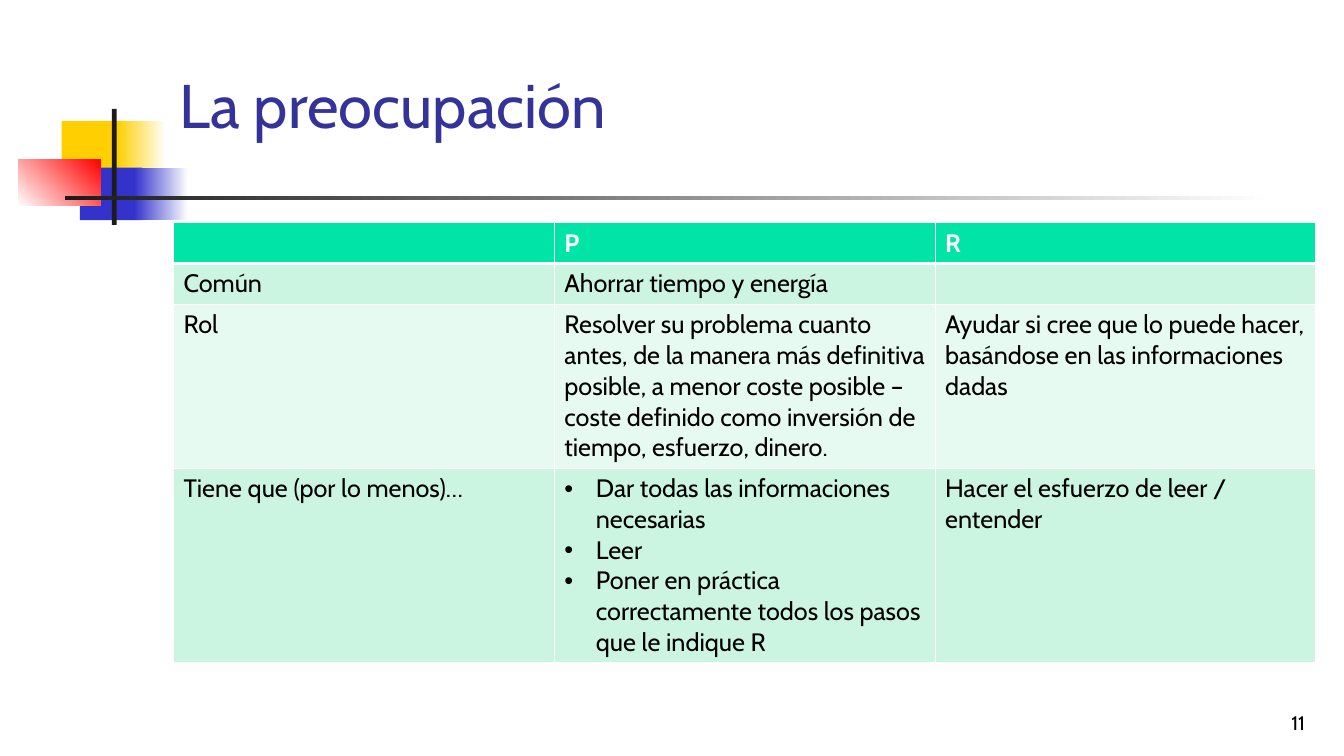
from dataclasses import dataclass

from lxml import etree
from pptx import Presentation
from pptx.dml.color import RGBColor
from pptx.enum import shapes, text
from pptx.oxml.ns import qn
from pptx.util import Pt


@dataclass(frozen=True)
class Theme:
    font: str = "Cabin"
    title_size: int = 44
    body_size: int = 18
    number_size: int = 14
    title: str = "333399"
    black: str = "000000"
    white: str = "FFFFFF"
    yellow: str = "FFCF01"
    blue: str = "3333CC"
    red: str = "FF0000"
    bar: str = "1C1C1C"
    header: str = "00E4A8"
    bands: tuple = ("CCF5E1", "E7FAF1")


THEME = Theme()

HEADINGS = ("", "P", "R")
CONCERNS = (
    ("Común", "Ahorrar tiempo y energía", ""),
    ("Rol",
     "Resolver su problema cuanto antes, de la manera más definitiva posible, "
     "a menor coste posible – coste definido como inversión de tiempo, esfuerzo, dinero.",
     "Ayudar si cree que lo puede hacer, basándose en las informaciones dadas"),
    ("Tiene que (por lo menos)…",
     ["Dar todas las informaciones necesarias",
      "Leer",
      "Poner en práctica correctamente todos los pasos que le indique R"],
     "Hacer el esfuerzo de leer / entender"),
)
ROW_HEIGHTS = (29.2, 29.2, 117.1, 138.6)
COLUMN_WIDTH = 272


def rgb(value):
    return RGBColor.from_string(value)


def add_run(paragraph, words, size, color, bold=False):
    run = paragraph.add_run()
    run.text = words
    run.font.name = THEME.font
    run.font.size = Pt(size)
    run.font.bold = bold
    run.font.color.rgb = rgb(color)


def add_block(slide, box, start, end=None, angle=0):
    """Plain rectangle, or one that fades from start to end."""
    block = slide.shapes.add_shape(shapes.MSO_SHAPE.RECTANGLE, *map(Pt, box))
    block.shadow.inherit = False
    block.line.fill.background()
    if end is None:
        block.fill.solid()
        block.fill.fore_color.rgb = rgb(start)
        return
    block.fill.gradient()
    block.fill.gradient_angle = angle
    for stop, color, position in zip(block.fill.gradient_stops, (start, end), (0, 1)):
        stop.color.rgb = rgb(color)
        stop.position = position


def add_ornament(slide):
    add_block(slide, (44, 86.4, 46, 37.4), THEME.yellow)
    add_block(slide, (84, 86.4, 34.5, 37.4), THEME.yellow, THEME.white)
    add_block(slide, (57, 119.8, 44.6, 37.4), THEME.blue)
    add_block(slide, (95.8, 119.8, 38.6, 37.4), THEME.blue, THEME.white)
    add_block(slide, (13, 113.6, 59, 33.4), THEME.white, THEME.red, angle=45)
    add_block(slide, (80, 77.8, 3.3, 82.8), THEME.bar)
    add_block(slide, (46.6, 140.2, 864, 2.5), THEME.bar, THEME.white)


def set_title(slide, words):
    title = slide.shapes.title
    title.left, title.top, title.width, title.height = map(Pt, (121, 16.6, 818, 115.2))
    frame = title.text_frame
    frame.auto_size = text.MSO_AUTO_SIZE.NONE
    frame.vertical_anchor = text.MSO_ANCHOR.MIDDLE
    frame.paragraphs[0].alignment = text.PP_ALIGN.LEFT
    add_run(frame.paragraphs[0], words, THEME.title_size, THEME.title)


def add_bullet(paragraph, indent=22.5):
    properties = paragraph._p.get_or_add_pPr()
    properties.set("marL", str(Pt(indent)))
    properties.set("indent", str(-Pt(indent)))
    etree.SubElement(properties, qn("a:buFont"), typeface="Arial")
    etree.SubElement(properties, qn("a:buChar"), char="•")


def set_borders(cell, bottom=1, top=1):
    properties = cell._tc.get_or_add_tcPr()
    sides = (("L", 1), ("R", 1), ("T", top), ("B", bottom))
    for place, (side, width) in enumerate(sides):
        line = etree.Element(qn(f"a:ln{side}"), w=str(Pt(width)))
        fill = etree.SubElement(line, qn("a:solidFill"))
        etree.SubElement(fill, qn("a:srgbClr"), val=THEME.white)
        properties.insert(place, line)


def fill_cell(cell, content, fill, color, bold=False):
    cell.fill.solid()
    cell.fill.fore_color.rgb = rgb(fill)
    bulleted = isinstance(content, list)
    for index, words in enumerate(content if bulleted else [content]):
        frame = cell.text_frame
        paragraph = frame.add_paragraph() if index else frame.paragraphs[0]
        if bulleted:
            add_bullet(paragraph)
        if words:
            add_run(paragraph, words, THEME.body_size, color, bold)


def add_concerns(slide):
    rows = (HEADINGS, *CONCERNS)
    frame = slide.shapes.add_table(
        len(rows), len(HEADINGS), Pt(124), Pt(159),
        Pt(COLUMN_WIDTH * len(HEADINGS)), Pt(sum(ROW_HEIGHTS)))
    concerns = frame.table
    for column in concerns.columns:
        column.width = Pt(COLUMN_WIDTH)
    for r, contents in enumerate(rows):
        concerns.rows[r].height = Pt(ROW_HEIGHTS[r])
        heading = r == 0
        fill = THEME.header if heading else THEME.bands[(r - 1) % 2]
        color = THEME.white if heading else THEME.black
        for c, content in enumerate(contents):
            cell = concerns.cell(r, c)
            fill_cell(cell, content, fill, color, bold=heading)
            set_borders(cell, bottom=3 if heading else 1, top=3 if r == 1 else 1)


def add_page_number(slide, number):
    box = slide.shapes.add_textbox(*map(Pt, (739.4, 491.8, 200, 36)))
    frame = box.text_frame
    frame.word_wrap = True
    frame.vertical_anchor = text.MSO_ANCHOR.BOTTOM
    frame.paragraphs[0].alignment = text.PP_ALIGN.RIGHT
    add_run(frame.paragraphs[0], number, THEME.number_size, THEME.black)


def main():
    deck = Presentation()
    deck.slide_width, deck.slide_height = Pt(960), Pt(540)
    slide = deck.slides.add_slide(deck.slide_layouts.get_by_name("Title Only"))
    # Corner ornament and heading
    add_ornament(slide)
    set_title(slide, "La preocupación")
    # Comparison of the two roles
    add_concerns(slide)
    # Footer
    add_page_number(slide, "11")
    deck.save("out.pptx")


if __name__ == "__main__":
    main()
